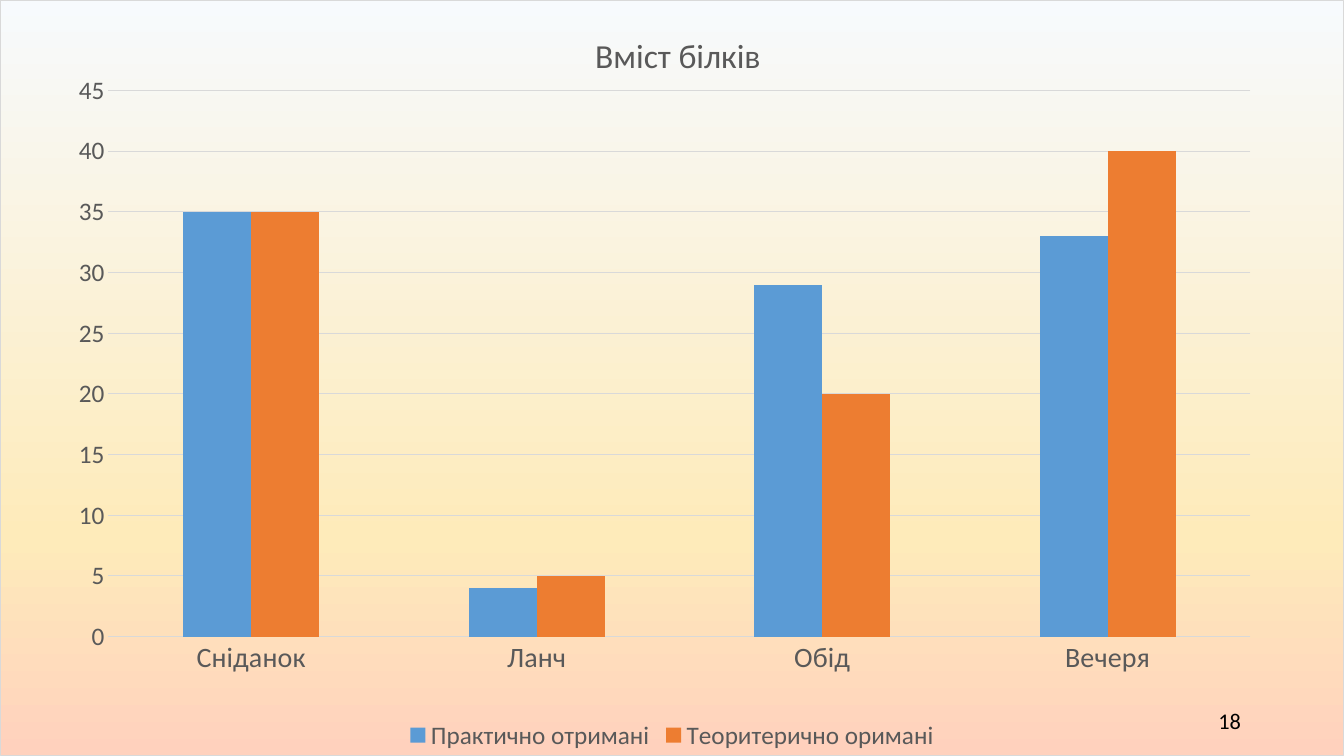
"""Builds the slide with the chart of protein content per meal."""
from dataclasses import dataclass

from lxml import etree
from pptx import Presentation
from pptx import util as u
from pptx.chart.data import CategoryChartData
from pptx.dml.color import RGBColor
from pptx.enum import chart as ch
from pptx.enum import text

WIDTH, HEIGHT = 1344, 756
C = "http://schemas.openxmlformats.org/drawingml/2006/chart"
A = "http://schemas.openxmlformats.org/drawingml/2006/main"


@dataclass(frozen=True)
class Theme:
    font: str = "Calibri"
    ink: str = "000000"
    label: str = "595959"
    rule: str = "D9D9D9"
    bars: tuple = ("5B9BD5", "ED7D31")
    backdrop: tuple = ((0, "F7FAFD"), (71, "FEEBBA"), (100, "FFD1BD"))
    title_size: int = 24
    meal_size: int = 20
    label_size: int = 18
    number_size: int = 16
    rule_width: float = 0.75


class Deck:
    def __init__(self, theme):
        self.theme = theme
        self.prs = Presentation()
        self.prs.slide_width = self.px(WIDTH)
        self.prs.slide_height = self.px(HEIGHT)
        self.slide = self.prs.slides.add_slide(self.prs.slide_layouts[6])

    def px(self, length):
        return u.Emu(round(length * 914400 / 100.8))

    def style(self, font, size, color):
        font.name = self.theme.font
        font.size = u.Pt(size)
        font.bold = False
        font.color.rgb = RGBColor.from_string(color)

    def rule(self, line):
        line.width = u.Pt(self.theme.rule_width)
        line.color.rgb = RGBColor.from_string(self.theme.rule)

    def column_chart(self, box, title, meals, contents, top, step):
        data = CategoryChartData()
        data.categories = meals
        for name, values in contents.items():
            data.add_series(name, values)
        chart = self.slide.shapes.add_chart(
            ch.XL_CHART_TYPE.COLUMN_CLUSTERED, *map(self.px, box), data).chart
        theme = self.theme
        self.style(chart.font, theme.label_size, theme.label)

        chart.has_title = True
        heading = chart.chart_title.text_frame.paragraphs[0].add_run()
        heading.text = title
        self.style(heading.font, theme.title_size, theme.label)
        chart.chart_title.include_in_layout = False

        chart.has_legend = True
        chart.legend.position = ch.XL_LEGEND_POSITION.BOTTOM
        chart.legend.include_in_layout = False
        self.style(chart.legend.font, theme.label_size, theme.label)

        amounts = chart.value_axis
        amounts.minimum_scale, amounts.maximum_scale = 0, top
        amounts.major_unit = step
        amounts.format.line.fill.background()
        self.rule(amounts.major_gridlines.format.line)
        self.rule(chart.category_axis.format.line)
        for axis, size in ((chart.category_axis, theme.meal_size),
                           (amounts, theme.label_size)):
            axis.major_tick_mark = ch.XL_TICK_MARK.NONE
            self.style(axis.tick_labels.font, size, theme.label)

        columns = chart.plots[0]
        columns.gap_width, columns.overlap = 219, 0
        columns.vary_by_categories = False
        for series, color in zip(columns.series, theme.bars):
            series.format.fill.solid()
            series.format.fill.fore_color.rgb = RGBColor.from_string(color)
        return chart

    def place(self, part, index, settings, box):
        for layout in part.findall(f"{{{C}}}layout"):
            part.remove(layout)
        shares = [length / whole for length, whole in zip(box, (WIDTH, HEIGHT) * 2)]
        settings = (*settings, ("xMode", "edge"), ("yMode", "edge"), *zip("xywh", shares))
        marks = "".join(f'<c:{tag} val="{value}"/>' for tag, value in settings)
        part.insert(index, etree.fromstring(
            f'<c:layout xmlns:c="{C}"><c:manualLayout>{marks}</c:manualLayout></c:layout>'))

    def place_title(self, chart, x, y):
        self.place(chart.element.find(f".//{{{C}}}title"), 1, (), (x, y))

    def place_plot(self, chart, *box):
        self.place(chart.element.find(f".//{{{C}}}plotArea"), 0,
                   (("layoutTarget", "inner"),), box)

    def backdrop(self, chart):
        stops = "".join(
            f'<a:gs pos="{percent * 1000}"><a:srgbClr val="{color}"/></a:gs>'
            for percent, color in self.theme.backdrop)
        border = u.Pt(self.theme.rule_width)
        chart.element.find(f"{{{C}}}chart").addnext(etree.fromstring(
            f'<c:spPr xmlns:c="{C}" xmlns:a="{A}"><a:gradFill><a:gsLst>{stops}</a:gsLst>'
            f'<a:lin ang="5400000" scaled="0"/></a:gradFill><a:ln w="{border}"><a:solidFill>'
            f'<a:srgbClr val="{self.theme.rule}"/></a:solidFill></a:ln></c:spPr>'))

    def page_number(self, box, number):
        frame = self.slide.shapes.add_textbox(*map(self.px, box)).text_frame
        frame.word_wrap = True
        frame.vertical_anchor = text.MSO_ANCHOR.MIDDLE
        line = frame.paragraphs[0]
        line.alignment = text.PP_ALIGN.RIGHT
        run = line.add_run()
        run.text = number
        self.style(run.font, self.theme.number_size, self.theme.ink)


def main():
    deck = Deck(Theme())
    proteins = deck.column_chart(
        (0, 0, WIDTH, HEIGHT), "Вміст білків",
        ("Сніданок", "Ланч", "Обід", "Вечеря"),
        {"Практично отримані": (35, 4, 29, 33),
         "Теоритерично оримані": (35, 5, 20, 40)},
        top=45, step=5)
    deck.place_title(proteins, 589, 26)
    deck.place_plot(proteins, 108, 90, 1143, 547)
    deck.backdrop(proteins)
    deck.page_number((949, 701, 302, 40), "18")
    deck.prs.save("out.pptx")


if __name__ == "__main__":
    main()
